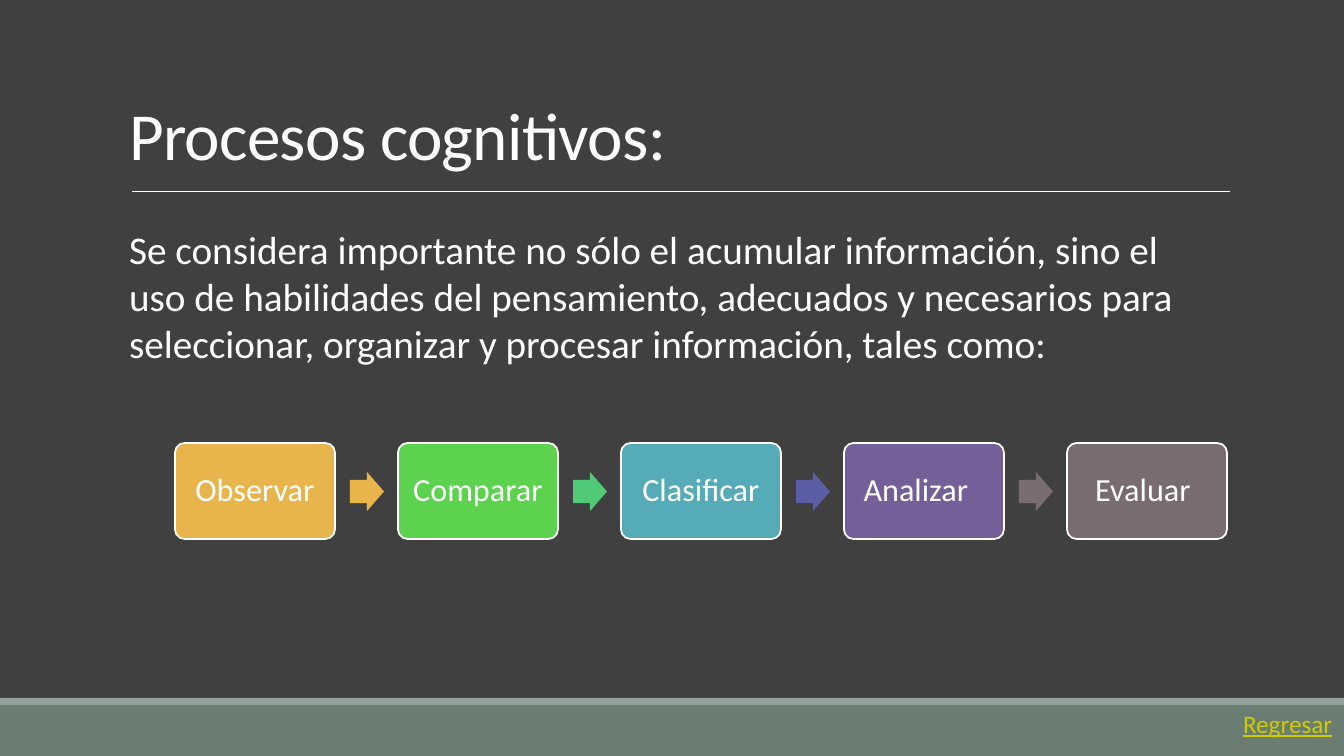
from pptx import Presentation
from pptx.dml.color import RGBColor
from pptx.enum.shapes import MSO_CONNECTOR, MSO_SHAPE
from pptx.enum.text import MSO_ANCHOR, MSO_AUTO_SIZE, PP_ALIGN
from pptx.oxml.ns import qn
from pptx.util import Pt
from lxml import etree

THEME = {
    "font": "Calibri", "bg": "404040", "text": "FFFFFF", "link": "CCCC00",
    "footer": "6B7D72", "stripe": "93A299",
    "title": 48, "body": 28, "step": 23, "small": 18,
}
PX = 914400 / 100.8


def px(*lengths):
    return [round(n * PX) for n in lengths]


def write(shape, text, size, color="text", align=PP_ALIGN.LEFT, anchor=MSO_ANCHOR.TOP,
          spacing=1.0, underline=None, kerning=None, wrap=True, insets=(10, 5, 10, 5)):
    tf = shape.text_frame
    tf.auto_size = MSO_AUTO_SIZE.NONE
    tf.word_wrap = wrap
    tf.vertical_anchor = anchor
    tf.margin_left, tf.margin_top, tf.margin_right, tf.margin_bottom = px(*insets)
    p = tf.paragraphs[0]
    p.alignment, p.line_spacing = align, spacing
    r = p.add_run()
    r.text = text
    r.font.name, r.font.size = THEME["font"], Pt(THEME[size])
    r.font.color.rgb = RGBColor.from_string(THEME[color])
    r.font.underline = underline
    if kerning:
        r.font._element.set("spc", str(kerning))


prs = Presentation()
prs.slide_width, prs.slide_height = px(1344, 756)
s = prs.slides.add_slide(prs.slide_layouts[5])
s.background.fill.solid()
s.background.fill.fore_color.rgb = RGBColor.from_string(THEME["bg"])

# Footer bands, then the steps and the arrows between them
STEPS = [  # label, box colour, colour of the next arrow, extra right inset
    ("Observar", "E8B54D", "E8B54D", 0),
    ("Comparar", "5CD24F", "50CA76", 0),
    ("Clasificar", "55ABB8", "5A5EA5", 0),
    ("Analizar", "745F99", "786C71", 16),
    ("Evaluar", "786C71", None, 8),
]
PITCH = 223
shapes = [
    (MSO_SHAPE.RECTANGLE, (0, 705, 1344, 51), THEME["footer"], None, 0),
    (MSO_SHAPE.RECTANGLE, (0, 698, 1344, 7), THEME["stripe"], None, 0),
]
for i, (label, box, arrow, shift) in enumerate(STEPS):
    x = 175 + i * PITCH
    shapes.append((MSO_SHAPE.ROUNDED_RECTANGLE, (x, 443, 160, 96), box, label, shift))
    if arrow:
        shapes.append((MSO_SHAPE.RIGHT_ARROW, (x + 175, 472, 34, 39), arrow, None, 0))

for kind, place, color, label, shift in shapes:
    sp = s.shapes.add_shape(kind, *px(*place))
    sp.shadow.inherit = False
    sp.fill.solid()
    sp.fill.fore_color.rgb = RGBColor.from_string(color)
    sp.line.fill.background()
    if kind == MSO_SHAPE.RIGHT_ARROW:
        sp.adjustments[0] = 0.6
    if label:
        sp.adjustments[0] = 0.1
        sp.line.color.rgb = RGBColor.from_string(THEME["text"])
        sp.line.width = Pt(1.25)
        write(sp, label, "step", align=PP_ALIGN.CENTER, anchor=MSO_ANCHOR.MIDDLE,
              spacing=0.9, insets=(10, 10, 10 + shift, 10))

# Title and the rule under it
title = s.shapes.title
title.left, title.top, title.width, title.height = px(119, 19, 1109, 160)
write(title, "Procesos cognitivos:", "title", anchor=MSO_ANCHOR.BOTTOM,
      spacing=0.85, kerning=-50)
rule = s.shapes.add_connector(MSO_CONNECTOR.STRAIGHT, *px(132, 191, 1230, 191))
rule.line.color.rgb = RGBColor.from_string(THEME["text"])
rule.line.width = Pt(0.5)
etree.SubElement(rule._element.spPr, qn("a:effectLst"))

# Introduction and return label
intro = s.shapes.add_textbox(*px(119, 220, 1109, 152))
write(intro, "Se considera importante no sólo el acumular información, sino el uso de "
      "habilidades del pensamiento, adecuados y necesarios para seleccionar, "
      "organizar y procesar información, tales como:", "body")
back = s.shapes.add_textbox(*px(1233, 703, 111, 40))
write(back, "Regresar", "small", color="link", underline=True, wrap=False)

prs.save("out.pptx")
